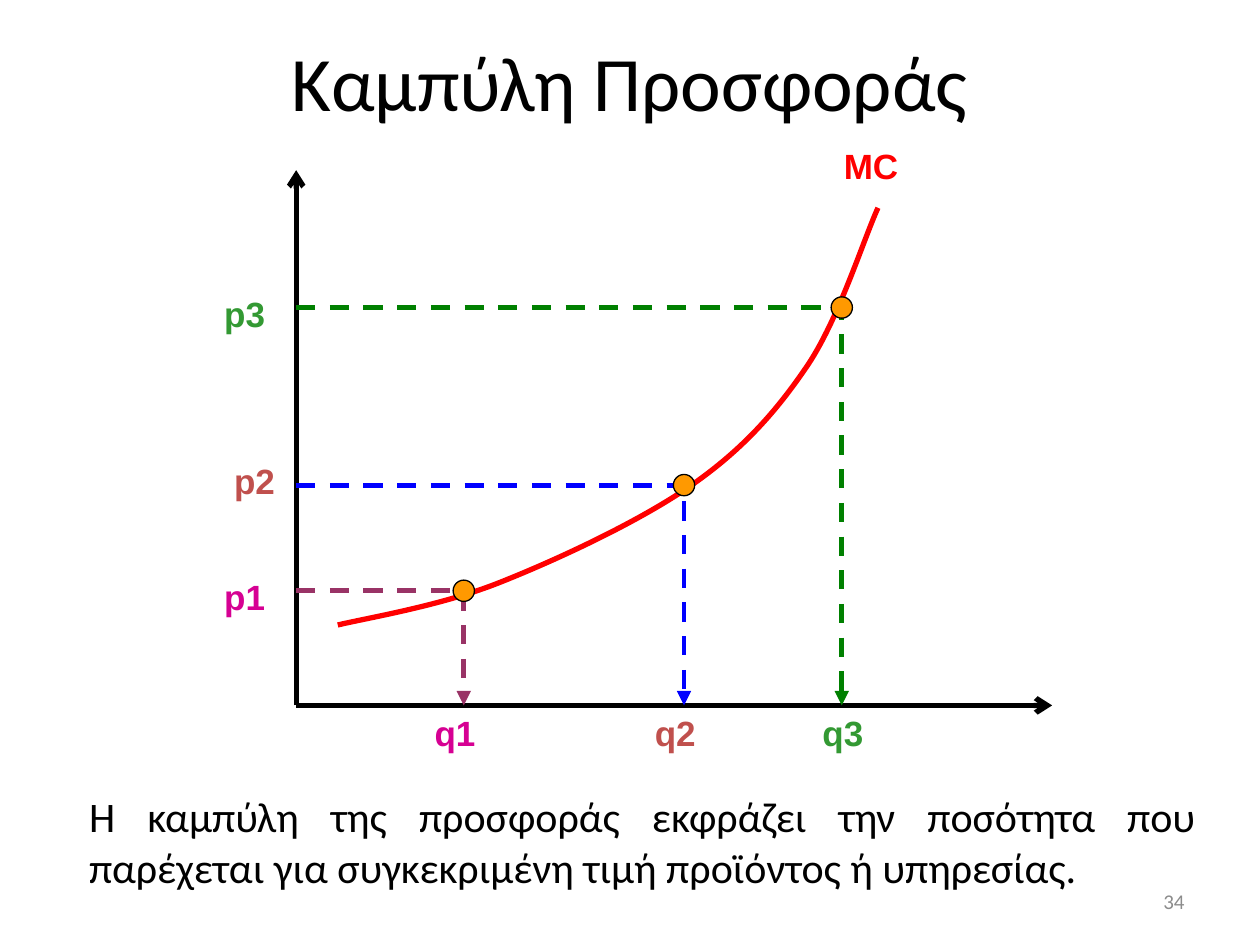
"""Build a slide showing a supply curve with three price and quantity levels."""
from dataclasses import dataclass

import pptx
import pptx.dml.color
import pptx.enum.dml
import pptx.enum.shapes
import pptx.enum.text
import pptx.oxml.ns
import pptx.oxml.xmlchemy
import pptx.util
from pptx.util import Cm

Align = pptx.enum.text.PP_ALIGN
Anchor = pptx.enum.text.MSO_ANCHOR
Point = tuple[float, float]

ORIGIN_X, ORIGIN_Y = 5.97, 14.22
DOT_SIZE = 0.43
LABEL_HEIGHT = 1.09
CURVE = [
    (6.81, 12.6),
    (7.34, 12.47), (8.86, 12.22), (10.03, 11.76),
    (11.2, 11.3), (12.83, 10.54), (13.87, 9.83),
    (14.91, 9.12), (15.6, 8.36), (16.23, 7.44),
    (16.89, 6.5), (17.4, 4.85), (17.7, 4.19),
]


@dataclass(frozen=True)
class Level:
    """A point on the curve with its guide and its two labels."""
    number: int
    quantity_x: float
    price_y: float
    price_label: Point
    quantity_label_x: float
    label_width: float
    label_color: str
    guide_color: str


LEVELS = [
    Level(1, 9.35, 11.91, (4.27, 11.48), 8.51, 1.8, "D60093", "993366"),
    Level(2, 13.79, 9.78, (4.47, 9.14), 12.95, 1.47, "C0504D", "0000FF"),
    Level(3, 16.97, 6.2, (4.27, 5.77), 16.33, 1.47, "339933", "008000"),
]


def rgb(color: str) -> pptx.dml.color.RGBColor:
    """Turn a hex string into a colour."""
    return pptx.dml.color.RGBColor.from_string(color)


def add_text(slide, text: str, left: float, top: float, width: float, height: float, *,
             size: float = 20, color: str = "000000", font: str = "Calibri",
             bold: bool = False, align=Align.LEFT, anchor=Anchor.TOP) -> None:
    """Add a formatted text box."""
    shape = slide.shapes.add_textbox(Cm(left), Cm(top), Cm(width), Cm(height))
    frame = shape.text_frame
    frame.word_wrap = True
    frame.vertical_anchor = anchor
    paragraph = frame.paragraphs[0]
    paragraph.alignment = align
    run = paragraph.add_run()
    run.text = text
    run.font.size = pptx.util.Pt(size)
    run.font.name = font
    run.font.bold = bold
    run.font.color.rgb = rgb(color)


def add_label(slide, text: str, left: float, top: float, width: float, color: str) -> None:
    """Add a bold diagram label."""
    add_text(slide, text, left, top, width, LABEL_HEIGHT, color=color, font="Arial", bold=True)


def style_line(shape, color: str, width: float, *, dashed: bool = False, arrow: str = "") -> None:
    """Set the colour, width, dash and arrowhead of a line."""
    shape.line.color.rgb = rgb(color)
    shape.line.width = pptx.util.Pt(width)
    if dashed:
        shape.line.dash_style = pptx.enum.dml.MSO_LINE.DASH
    if arrow:
        tail = pptx.oxml.xmlchemy.OxmlElement("a:tailEnd")
        tail.set("type", arrow)
        shape.line._get_or_add_ln().append(tail)


def add_axis(slide, end_x: float, end_y: float) -> None:
    """Draw an arrow from the origin."""
    axis = slide.shapes.add_connector(
        pptx.enum.shapes.MSO_CONNECTOR.STRAIGHT,
        Cm(ORIGIN_X), Cm(ORIGIN_Y), Cm(end_x), Cm(end_y))
    style_line(axis, "000000", 3, arrow="arrow")
    axis._element.spPr.append(pptx.oxml.xmlchemy.OxmlElement("a:effectLst"))


def add_open_path(slide, points: list[Point]):
    """Draw an unfilled open outline through the points."""
    start, *rest = [(Cm(x), Cm(y)) for x, y in points]
    builder = slide.shapes.build_freeform(*start)
    builder.add_line_segments(rest, close=False)
    shape = builder.convert_to_shape()
    shape.fill.background()
    shape.shadow.inherit = False
    return shape


def add_curve(slide, points: list[Point], color: str) -> None:
    """Draw a start point followed by triples of cubic control points."""
    shape = add_open_path(slide, points)
    qn = pptx.oxml.ns.qn
    segments = list(shape._element.iter(qn("a:lnTo")))
    for first in range(0, len(segments), 3):
        cubic = pptx.oxml.xmlchemy.OxmlElement("a:cubicBezTo")
        segments[first].addprevious(cubic)
        for segment in segments[first:first + 3]:
            cubic.append(segment.find(qn("a:pt")))
            segment.getparent().remove(segment)
    style_line(shape, color, 3)


def add_level(slide, level: Level) -> None:
    """Draw the guide, dot and labels of a level."""
    x, y = level.quantity_x, level.price_y
    add_label(slide, f"p{level.number}", *level.price_label, level.label_width, level.label_color)
    add_label(slide, f"q{level.number}", level.quantity_label_x, ORIGIN_Y,
              level.label_width, level.label_color)
    guide = add_open_path(slide, [(ORIGIN_X, y), (x, y), (x, ORIGIN_Y)])
    style_line(guide, level.guide_color, 2.75, dashed=True, arrow="triangle")
    dot = slide.shapes.add_shape(
        pptx.enum.shapes.MSO_SHAPE.OVAL,
        Cm(x - DOT_SIZE / 2), Cm(y - DOT_SIZE / 2), Cm(DOT_SIZE), Cm(DOT_SIZE))
    dot.shadow.inherit = False
    dot.fill.solid()
    dot.fill.fore_color.rgb = rgb("FF9900")
    style_line(dot, "000000", 0.75)


def main() -> None:
    """Build and save the slide."""
    presentation = pptx.Presentation()
    presentation.slide_width, presentation.slide_height = Cm(25.4), Cm(19.05)
    slide = presentation.slides.add_slide(presentation.slide_layouts[6])
    add_text(slide, "Καμπύλη Προσφοράς", 0, 0.03, 25.4, 3.18,
             size=44, align=Align.CENTER, anchor=Anchor.MIDDLE)
    add_text(slide, "34", 18.21, 17.65, 5.92, 1.02,
             size=12, color="8C8C8C", align=Align.RIGHT, anchor=Anchor.MIDDLE)
    add_label(slide, "ΜC", 16.76, 2.79, 1.7, "FF0000")
    add_axis(slide, ORIGIN_X, 3.43)
    add_axis(slide, 21.21, ORIGIN_Y)
    add_curve(slide, CURVE, "FF0000")
    for level in LEVELS:
        add_level(slide, level)
    add_text(slide, "Η καμπύλη της προσφοράς εκφράζει την ποσότητα που παρέχεται "
             "για συγκεκριμένη τιμή προϊόντος ή υπηρεσίας.",
             1.55, 15.82, 22.81, 2.31, size=24, align=Align.JUSTIFY)
    presentation.save("out.pptx")


if __name__ == "__main__":
    main()
